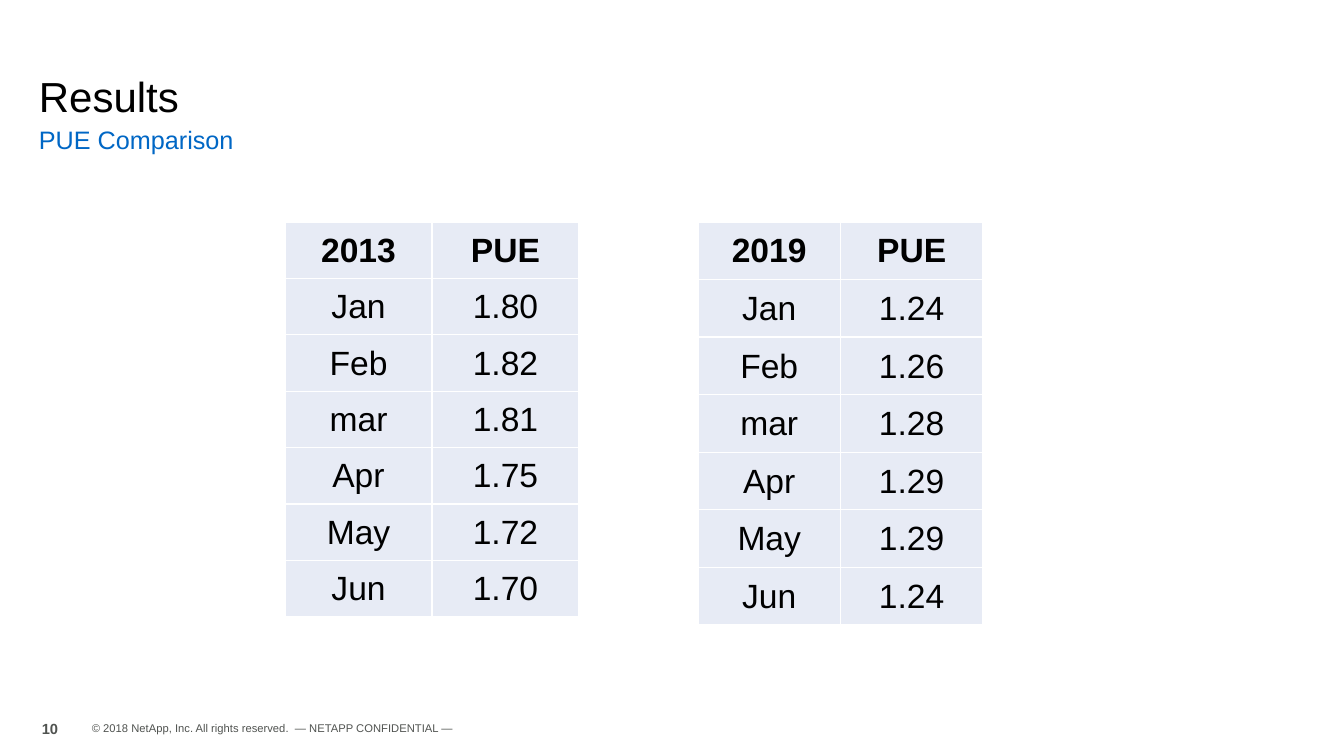
"""Build the PUE results slide with one table for each year."""
from lxml import etree
from pptx import Presentation, util as u
from pptx.dml.color import RGBColor
from pptx.enum import text
from pptx.oxml import ns

HUES = {"ink": "000000", "blue": "0067C5", "gray": "505350",
        "cell": "E7EBF5", "rule": "FFFFFF"}
MONTHS = ["Jan", "Feb", "mar", "Apr", "May", "Jun"]
YEARS = [
    ("2019", ["1.24", "1.26", "1.28", "1.29", "1.29", "1.24"], (698, 222, 285, 403)),
    ("2013", ["1.80", "1.82", "1.81", "1.75", "1.72", "1.70"], (285, 222, 294, 395)),
]


class Deck:
    """Hold the style and the current slide."""

    font = "Arial"
    scale = 914400 / 100.8

    def __init__(self, wide, high):
        self.prs = Presentation()
        self.prs.slide_width, self.prs.slide_height = self.px(wide), self.px(high)
        self.slide = self.prs.slides.add_slide(self.prs.slide_layouts[6])

    def px(self, n):
        return u.Emu(round(n * self.scale))

    def run(self, para, words, size, hue, bold=False):
        run = para.add_run()
        run.text = words
        font = run.font
        font.name, font.size, font.bold = self.font, u.Pt(size), bold
        font.color.rgb = RGBColor.from_string(HUES[hue])

    def label(self, area, words, size, hue, bold=False, base=True, lead=1.0):
        frame = self.slide.shapes.add_textbox(*map(self.px, area)).text_frame
        frame.word_wrap = True
        frame.vertical_anchor = text.MSO_ANCHOR.BOTTOM if base else text.MSO_ANCHOR.TOP
        para = frame.paragraphs[0]
        para.line_spacing = lead
        self.run(para, words, size, hue, bold)

    def edges(self, cell):
        props = cell._tc.get_or_add_tcPr()
        for side in ("lnL", "lnR", "lnT", "lnB"):
            line = etree.SubElement(props, ns.qn(f"a:{side}"), w=str(u.Pt(1)))
            fill = etree.SubElement(line, ns.qn("a:solidFill"))
            etree.SubElement(fill, ns.qn("a:srgbClr"), val=HUES["rule"])

    def cell(self, cell, words, bold):
        self.edges(cell)
        cell.fill.solid()
        cell.fill.fore_color.rgb = RGBColor.from_string(HUES["cell"])
        cell.margin_left = cell.margin_right = cell.margin_top = self.px(1)
        cell.margin_bottom = 0
        cell.vertical_anchor = text.MSO_ANCHOR.MIDDLE
        para = cell.text_frame.paragraphs[0]
        para.alignment = text.PP_ALIGN.CENTER
        self.run(para, words, 24, "ink", bold)

    def table(self, area, rows):
        frame = self.slide.shapes.add_table(len(rows), len(rows[0]), *map(self.px, area))
        grid = frame.table
        grid.first_row = grid.horz_banding = False
        for r, row in enumerate(rows):
            for c, words in enumerate(row):
                self.cell(grid.cell(r, c), words, r == 0)


def main():
    deck = Deck(1344, 756)
    deck.label((29, 26, 1122, 100), "Results", 30, "ink", lead=0.8)
    deck.label((29, 122, 1122, 44), "PUE Comparison", 18, "blue", base=False, lead=0.95)
    deck.label((32, 713, 49, 29), "10", 10.5, "gray", bold=True)
    deck.label((82, 714, 721, 26),
               "© 2018 NetApp, Inc. All rights reserved.  — NETAPP CONFIDENTIAL —", 8, "gray")
    for year, rates, area in YEARS:
        deck.table(area, [(year, "PUE"), *zip(MONTHS, rates)])
    deck.prs.save("out.pptx")


if __name__ == "__main__":
    main()
